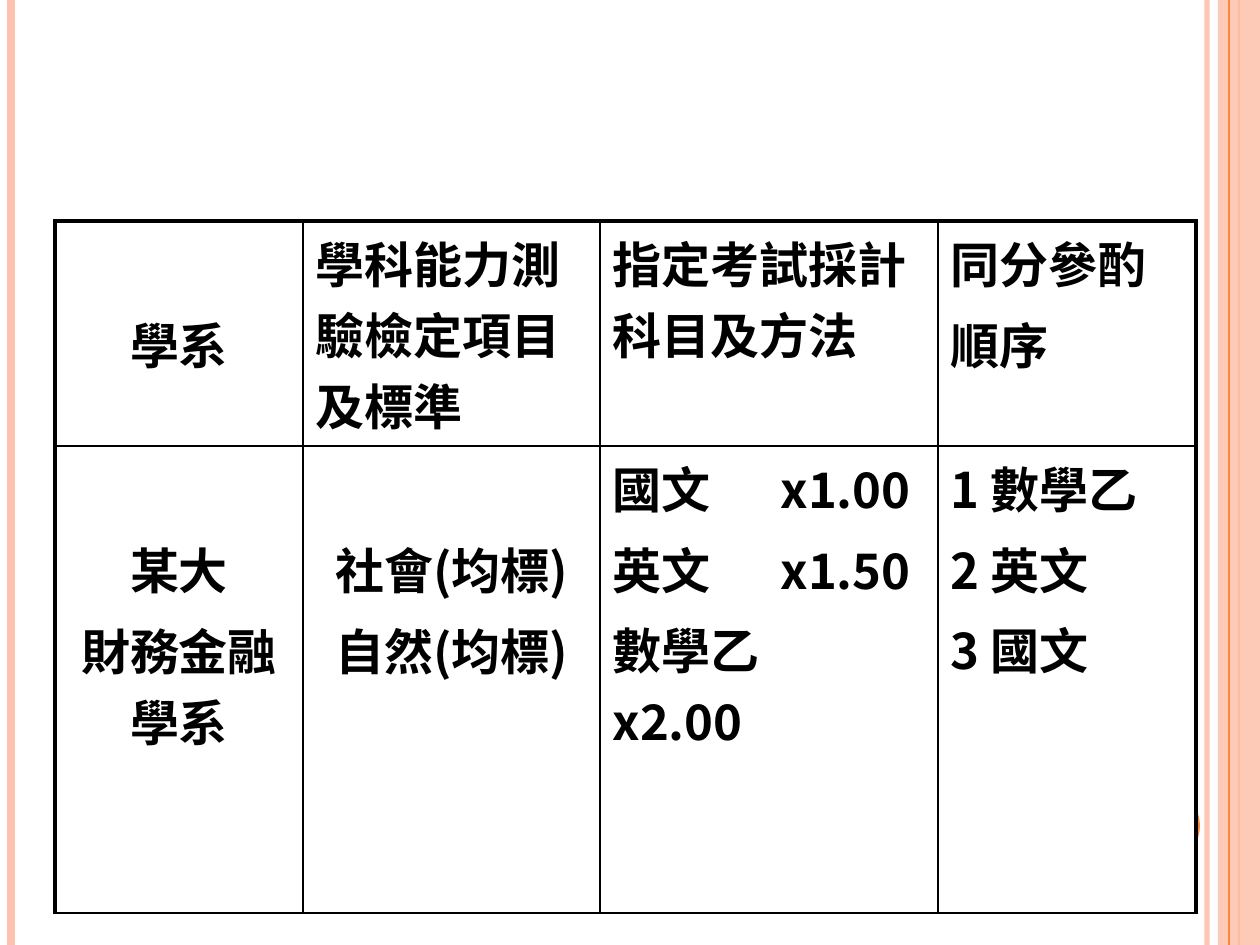
from lxml import etree
from pptx import Presentation
from pptx.dml.color import RGBColor
from pptx.enum.shapes import MSO_CONNECTOR, MSO_SHAPE
from pptx.enum.text import PP_ALIGN
from pptx.oxml.ns import qn
from pptx.util import Emu, Pt

STRAIGHT = MSO_CONNECTOR.STRAIGHT
RECTANGLE, OVAL = MSO_SHAPE.RECTANGLE, MSO_SHAPE.OVAL
LEFT, CENTER = PP_ALIGN.LEFT, PP_ALIGN.CENTER

THEME = {
    "font": "Noto Sans CJK SC",
    "size": Pt(28),
    "space_before": Pt(5.6),
    "text": RGBColor.from_string("000000"),
    "paper": RGBColor.from_string("FFFFFF"),
    "peach": RGBColor.from_string("FEC3AE"),
    "orange": RGBColor.from_string("FE8637"),
    "outer_border": Pt(2.25),
    "inner_border": Pt(1),
}
PX = 914400 / 126


def px(length):
    return Emu(round(length * PX))


def set_alpha(element, percent):
    color = element.find(".//" + qn("a:srgbClr"))
    etree.SubElement(color, qn("a:alpha"), val=str(percent * 1000))


prs = Presentation()
prs.slide_width, prs.slide_height = px(1260), px(945)
slide = prs.slides.add_slide(prs.slide_layouts[6])
shapes = slide.shapes

# Side band and dot: kind, left, top, width, height, colour, opacity
ornaments = [
    (RECTANGLE, 1218, 0, 42, 945, "peach", 87),
    (OVAL, 1124, 788, 76, 76, "orange", 100),
]
for kind, left, top, width, height, color, opacity in ornaments:
    ornament = shapes.add_shape(kind, px(left), px(top), px(width), px(height))
    ornament.shadow.inherit = False
    ornament.fill.solid()
    ornament.fill.fore_color.rgb = THEME[color]
    set_alpha(ornament._element.spPr, opacity)
    ornament.line.fill.background()

# Vertical stripes: x, colour, weight, opacity
stripes = [
    (1207, "peach", 3, 93),
    (11, "peach", 4.5, 100),
    (1239, "orange", 1.5, 100),
    (1229, "orange", 0.75, 100),
]
band_element = shapes[0]._element
for x, color, weight, opacity in stripes:
    stripe = shapes.add_connector(STRAIGHT, px(x), px(0), px(x), px(945))
    stripe.line.color.rgb = THEME[color]
    stripe.line.width = Pt(weight)
    set_alpha(stripe.line._ln, opacity)
    etree.SubElement(stripe._element.spPr, qn("a:effectLst"))
    # Only the thin orange stripe lies above the band
    if weight > 1:
        band_element.addprevious(stripe._element)

# Admission table: paragraphs, alignment, top margin of each cell
column_widths = [248, 297, 338, 258]
row_heights = [225, 467]
TOP, LOWERED = 6, 87
admission_rows = [
    [
        (["學系"], CENTER, LOWERED),
        (["學科能力測驗檢定項目及標準"], LEFT, TOP),
        (["指定考試採計科目及方法"], LEFT, TOP),
        (["同分參酌", "順序"], LEFT, TOP),
    ],
    [
        (["某大", "財務金融學系"], CENTER, LOWERED),
        (["社會(均標)", "自然(均標)"], CENTER, LOWERED),
        (["國文\tx1.00", "英文\tx1.50", "數學乙\vx2.00"], LEFT, TOP),
        (["1 數學乙", "2 英文", "3 國文"], LEFT, TOP),
    ],
]
admissions = shapes.add_table(
    len(row_heights), len(column_widths), px(55), px(221),
    px(sum(column_widths)), px(sum(row_heights))).table
for column, width in zip(admissions.columns, column_widths):
    column.width = px(width)
for row, height in zip(admissions.rows, row_heights):
    row.height = px(height)

last_column = len(column_widths) - 1
for r, row in enumerate(admission_rows):
    for c, (lines, alignment, top_margin) in enumerate(row):
        cell = admissions.cell(r, c)
        cell.fill.solid()
        cell.fill.fore_color.rgb = THEME["paper"]
        cell.margin_top = px(top_margin)

        # Borders: heavy on the left, top and right edges of the table
        edges = [("a:lnL", c == 0), ("a:lnR", c == last_column),
                 ("a:lnT", r == 0), ("a:lnB", False)]
        properties = cell._tc.get_or_add_tcPr()
        for position, (tag, is_outer) in enumerate(edges):
            weight = THEME["outer_border" if is_outer else "inner_border"]
            border = etree.Element(qn(tag), w=str(weight))
            fill = etree.SubElement(border, qn("a:solidFill"))
            etree.SubElement(fill, qn("a:srgbClr"), val=str(THEME["text"]))
            properties.insert(position, border)

        # Text, with a tab stop for the weights
        cell.text_frame.text = "\n".join(lines)
        for paragraph in cell.text_frame.paragraphs:
            paragraph.alignment = alignment
            paragraph.space_before = THEME["space_before"]
            font = paragraph.font
            font.size = THEME["size"]
            font.bold = True
            font.color.rgb = THEME["text"]
            font.name = THEME["font"]
            defaults = font._rPr
            etree.SubElement(defaults, qn("a:ea"), typeface=THEME["font"])
            if "\t" in paragraph.text:
                tabs = etree.Element(qn("a:tabLst"))
                etree.SubElement(tabs, qn("a:tab"), pos=str(px(168)), algn="l")
                defaults.addprevious(tabs)

prs.save("out.pptx")
